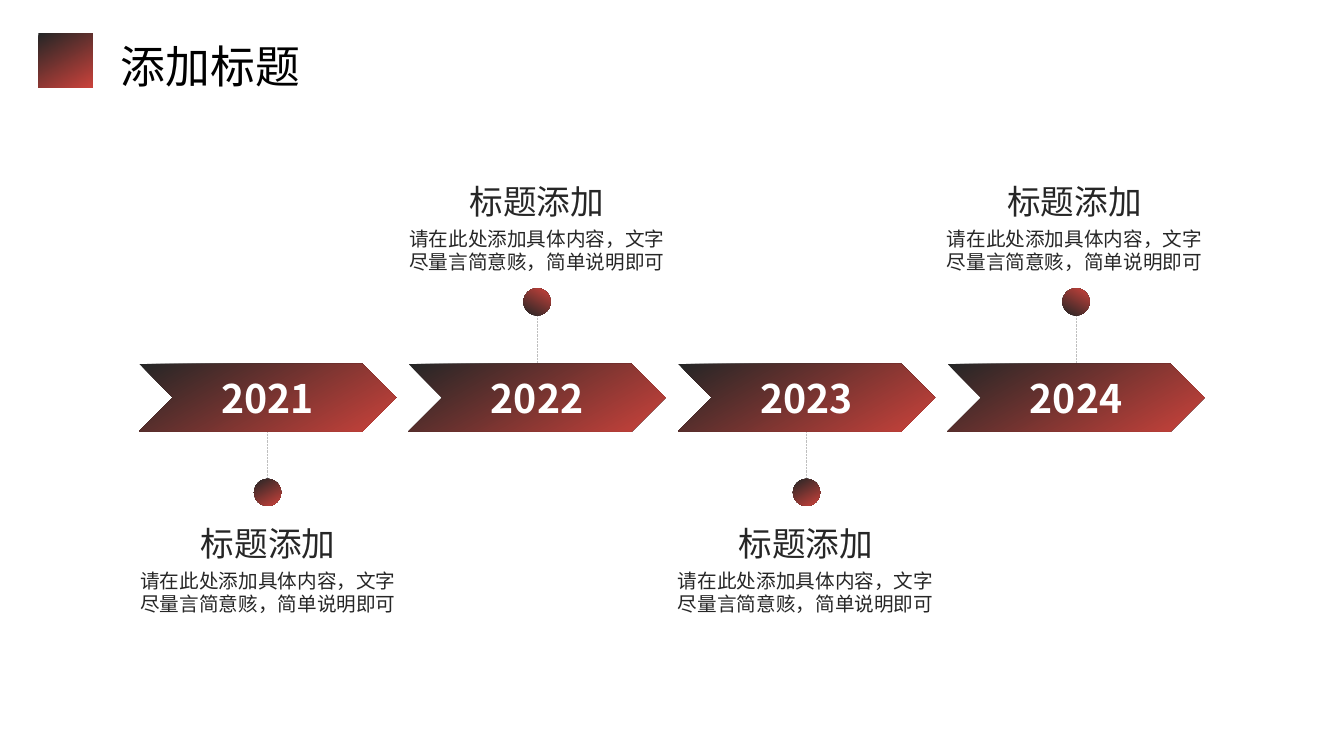
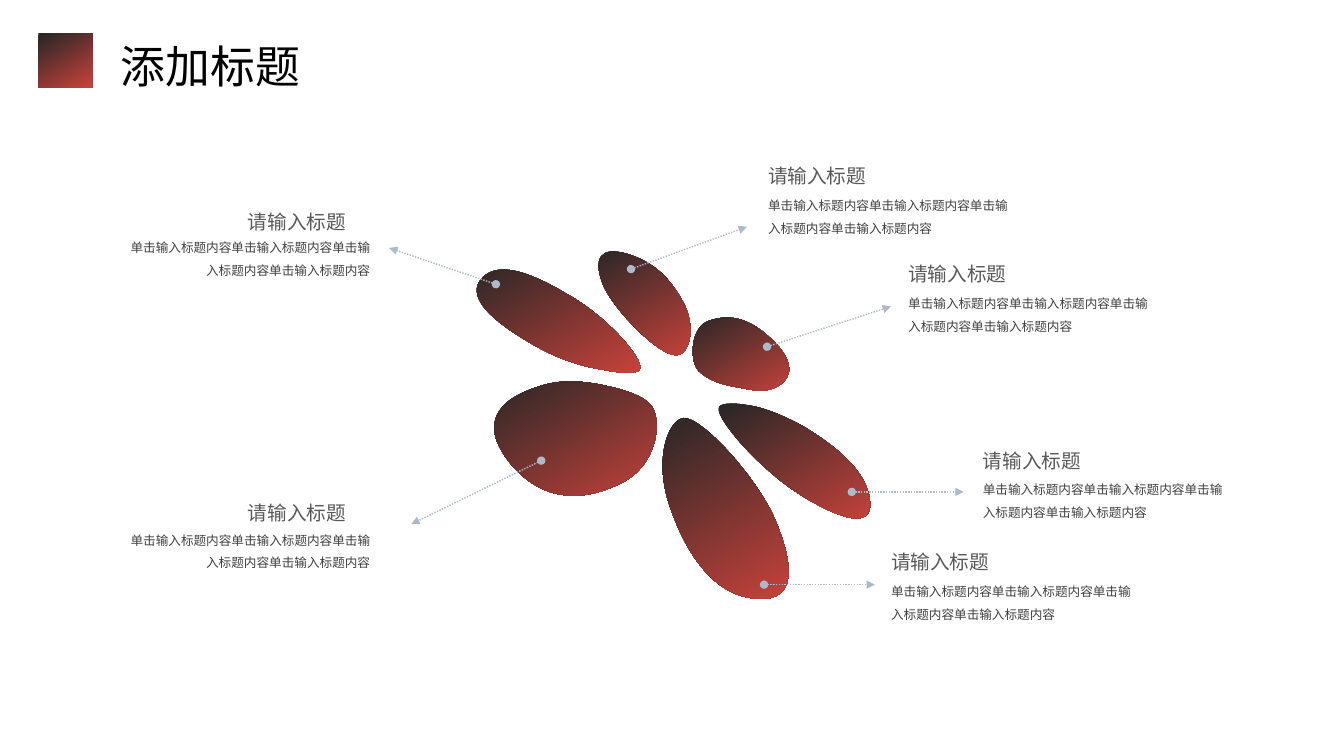
from lxml import etree
from pptx import Presentation
from pptx.dml.color import RGBColor
from pptx.enum.dml import MSO_LINE
from pptx.enum.shapes import MSO_CONNECTOR, MSO_SHAPE
from pptx.enum.text import MSO_ANCHOR, MSO_AUTO_SIZE, PP_ALIGN
from pptx.oxml.ns import qn
from pptx.util import Emu, Pt

LEFT, CENTER, RIGHT = PP_ALIGN.LEFT, PP_ALIGN.CENTER, PP_ALIGN.RIGHT
TOP, MIDDLE = MSO_ANCHOR.TOP, MSO_ANCHOR.MIDDLE
RECT, OVAL, CHEVRON = MSO_SHAPE.RECTANGLE, MSO_SHAPE.OVAL, MSO_SHAPE.CHEVRON
DOTTED = MSO_LINE.ROUND_DOT
STRAIGHT = MSO_CONNECTOR.STRAIGHT
NO_AUTOFIT = MSO_AUTO_SIZE.NONE

# Shared style; 100 px to the inch, 16:9
PX = 9144
SLIDE_SIZE = (750 * 16 / 9, 750)
FONT = "Noto Sans CJK SC"
LINE_HEIGHT = 1.2
DARK, RED, WHITE, BLACK = "262626", "C9423B", "FFFFFF", "000000"
STEM_GRAY, POINTER_BLUE = "BFBFBF", "ADBACA"
LABEL_GRAY, DETAIL_GRAY = "595959", "404040"
TITLE_BOX = (110, 33, 233, 64)
EMBLEM_BOX = (38, 33, 54, 54)

# Content: timeline
TIMELINE_TITLE = "添加标题"
MILESTONE = ("标题添加", "请在此处添加具体内容，文字尽量言简意赅，简单说明即可")
MILESTONES = [("2021", "below"), ("2022", "above"), ("2023", "below"), ("2024", "above")]
ARROW_LEFTS = (138, 940)
CAPTION_LEFTS = (129, 929)
ARROW_TOP, ARROW_WIDTH, ARROW_HEIGHT = 361, 255, 67
DOT, CAPTION_WIDTH = 27, 274
SIDES = {
    "below": {"stem": (429, 484), "dot": 475, "heading": 514, "body": 559, "angle": -60},
    "above": {"stem": (360, 305), "dot": 286, "heading": 175, "body": 220, "angle": 60},
}

# Content: petals, each a start point and then Bézier triples
PETALS_TITLE = "添加标题"
CALLOUT = ("请输入标题", "单击输入标题内容单击输入标题内容单击输入标题内容单击输入标题内容")
PETALS = [
    [(681, 415), (666, 411), (648, 449), (663, 498), (681, 554), (712, 593), (752, 594),
     (789, 597), (790, 563), (767, 511), (745, 466), (697, 417), (681, 415)],
    [(713, 405), (711, 416), (754, 467), (799, 494), (843, 520), (867, 522), (863, 495),
     (859, 469), (835, 446), (797, 423), (777, 412), (757, 404), (742, 402),
     (725, 399), (713, 400), (713, 405)],
    [(668, 352), (682, 356), (692, 329), (679, 302), (665, 275), (648, 260), (623, 252),
     (596, 244), (588, 255), (598, 282), (609, 308), (652, 350), (668, 352)],
    [(635, 366), (639, 357), (604, 315), (563, 292), (523, 268), (494, 260), (479, 275),
     (462, 292), (482, 315), (529, 342), (553, 356), (578, 364), (599, 367),
     (619, 371), (634, 371), (635, 366)],
    [(693, 368), (702, 377), (714, 381), (730, 384), (747, 387), (758, 391), (772, 383),
     (786, 375), (789, 359), (766, 337), (744, 316), (725, 311), (704, 318),
     (684, 324), (684, 359), (693, 368)],
    [(645, 401), (639, 394), (622, 387), (602, 383), (581, 378), (556, 376), (536, 383),
     (493, 396), (476, 420), (504, 457), (535, 497), (576, 500), (617, 479),
     (653, 461), (658, 415), (645, 401)],
]
# Pointer start, pointer end, label corner, detail corner, detail alignment
CALLOUTS = [
    ((492, 282), (386, 246), (246, 208), (118, 231), RIGHT),
    ((537, 457), (408, 520), (246, 497), (118, 521), RIGHT),
    ((626, 267), (741, 225), (762, 163), (762, 189), LEFT),
    ((761, 344), (884, 304), (901, 260), (901, 286), LEFT),
    ((845, 488), (956, 488), (975, 445), (975, 471), LEFT),
    ((758, 580), (868, 580), (884, 546), (884, 572), LEFT),
]
LABEL_SIZE, DETAIL_SIZE = (122, 24), (249, 44)


def emu(*lengths):
    return [Emu(round(length * PX)) for length in lengths]


def color(value):
    return RGBColor.from_string(value)


def apply(target, values):
    for name, value in values.items():
        setattr(target, name, value)


def spread(ends, count):
    """Evenly spaced positions from the first end to the last."""
    first, last = ends
    return [first + (last - first) * index / (count - 1) for index in range(count)]


def write(shape, text, size, ink, align=LEFT, bold=False, spacing=1,
          anchor=TOP, inset=(10, 5), wrap=True):
    side, end = emu(*inset)
    frame = shape.text_frame
    apply(frame, {"text": text, "word_wrap": wrap, "auto_size": NO_AUTOFIT,
                  "vertical_anchor": anchor, "margin_left": side, "margin_right": side,
                  "margin_top": end, "margin_bottom": end})
    paragraph = frame.paragraphs[0]
    apply(paragraph, {"alignment": align,
                      "line_spacing": Pt(round(size * LINE_HEIGHT * spacing, 1))})
    font = paragraph.runs[0].font
    apply(font, {"size": Pt(size), "bold": bold, "name": FONT})
    font.color.rgb = color(ink)
    etree.SubElement(font._rPr, qn("a:ea"), typeface=FONT)


def add_text(slide, box, text, size, ink, **style):
    write(slide.shapes.add_textbox(*emu(*box)), text, size, ink, **style)


def shade(shape, angle=-60):
    """Dark-to-red gradient; the angle runs counter-clockwise."""
    shape.shadow.inherit = False
    shape.line.fill.background()
    shape.fill.gradient()
    shape.fill.gradient_angle = angle % 360
    for stop, position, ink in zip(shape.fill.gradient_stops, (0.01, 0.99), (DARK, RED)):
        stop.position = position
        stop.color.rgb = color(ink)


def add_shaded(slide, kind, box, angle=-60):
    shape = slide.shapes.add_shape(kind, *emu(*box))
    shade(shape, angle)
    return shape


def add_dotted(slide, start, end, ink, width, ends=()):
    connector = slide.shapes.add_connector(STRAIGHT, *emu(*start, *end))
    connector.line.color.rgb = color(ink)
    apply(connector.line, {"width": Pt(width), "dash_style": DOTTED})
    for tag, kind in ends:
        etree.SubElement(connector.get_or_add_ln(), qn(tag), type=kind)
    etree.SubElement(connector._element.spPr, qn("a:effectLst"))


def add_petal(slide, petal):
    """Lay out the control points, then join each three into one curve."""
    start, *controls = [emu(*point) for point in petal]
    outline = slide.shapes.build_freeform(*start)
    outline.add_line_segments(controls, close=True)
    shape = outline.convert_to_shape()
    segments = list(shape._element.iter(qn("a:lnTo")))
    for first in range(0, len(segments), 3):
        curve = etree.Element(qn("a:cubicBezTo"))
        segments[first].addprevious(curve)
        for segment in segments[first:first + 3]:
            curve.append(segment[0])
            segment.getparent().remove(segment)
    shade(shape)


def add_titled_slide(deck, text):
    slide = deck.slides.add_slide(deck.slide_layouts[5])
    title = slide.shapes.title
    apply(title, dict(zip(("left", "top", "width", "height"), emu(*TITLE_BOX))))
    write(title, text, 32, BLACK)
    add_shaded(slide, RECT, EMBLEM_BOX)
    return slide


def build_timeline(deck):
    slide = add_titled_slide(deck, TIMELINE_TITLE)
    heading, body = MILESTONE
    count = len(MILESTONES)
    columns = zip(MILESTONES, spread(ARROW_LEFTS, count), spread(CAPTION_LEFTS, count))
    for (year, side_name), left, caption_left in columns:
        middle = left + ARROW_WIDTH / 2
        side = SIDES[side_name]
        arrow = add_shaded(slide, CHEVRON, (left, ARROW_TOP, ARROW_WIDTH, ARROW_HEIGHT))
        write(arrow, year, 28, WHITE, align=CENTER, bold=True, anchor=MIDDLE,
              inset=(0, 0), wrap=False)
        # Stem and dot
        stem_start, stem_end = side["stem"]
        add_dotted(slide, (middle, stem_start), (middle, stem_end), STEM_GRAY, 0.5)
        add_shaded(slide, OVAL, (middle - DOT / 2, side["dot"], DOT, DOT), side["angle"])
        # Caption
        add_text(slide, (caption_left, side["heading"], CAPTION_WIDTH, 50),
                 heading, 24, DARK, align=CENTER)
        add_text(slide, (caption_left, side["body"], CAPTION_WIDTH, 57),
                 body, 14, DARK, align=CENTER)


def build_petals(deck):
    slide = add_titled_slide(deck, PETALS_TITLE)
    for petal in PETALS:
        add_petal(slide, petal)
    # Pointers and their texts
    label, detail = CALLOUT
    for start, end, label_corner, detail_corner, align in CALLOUTS:
        add_dotted(slide, start, end, POINTER_BLUE, 1,
                   ends=(("a:headEnd", "oval"), ("a:tailEnd", "triangle")))
        add_text(slide, label_corner + LABEL_SIZE, label, 14, LABEL_GRAY, inset=(0, 0))
        add_text(slide, detail_corner + DETAIL_SIZE, detail, 9, DETAIL_GRAY,
                 align=align, spacing=1.5, inset=(0, 0))


def main():
    deck = Presentation()
    deck.slide_width, deck.slide_height = emu(*SLIDE_SIZE)
    build_timeline(deck)
    build_petals(deck)
    deck.save("out.pptx")


if __name__ == "__main__":
    main()
